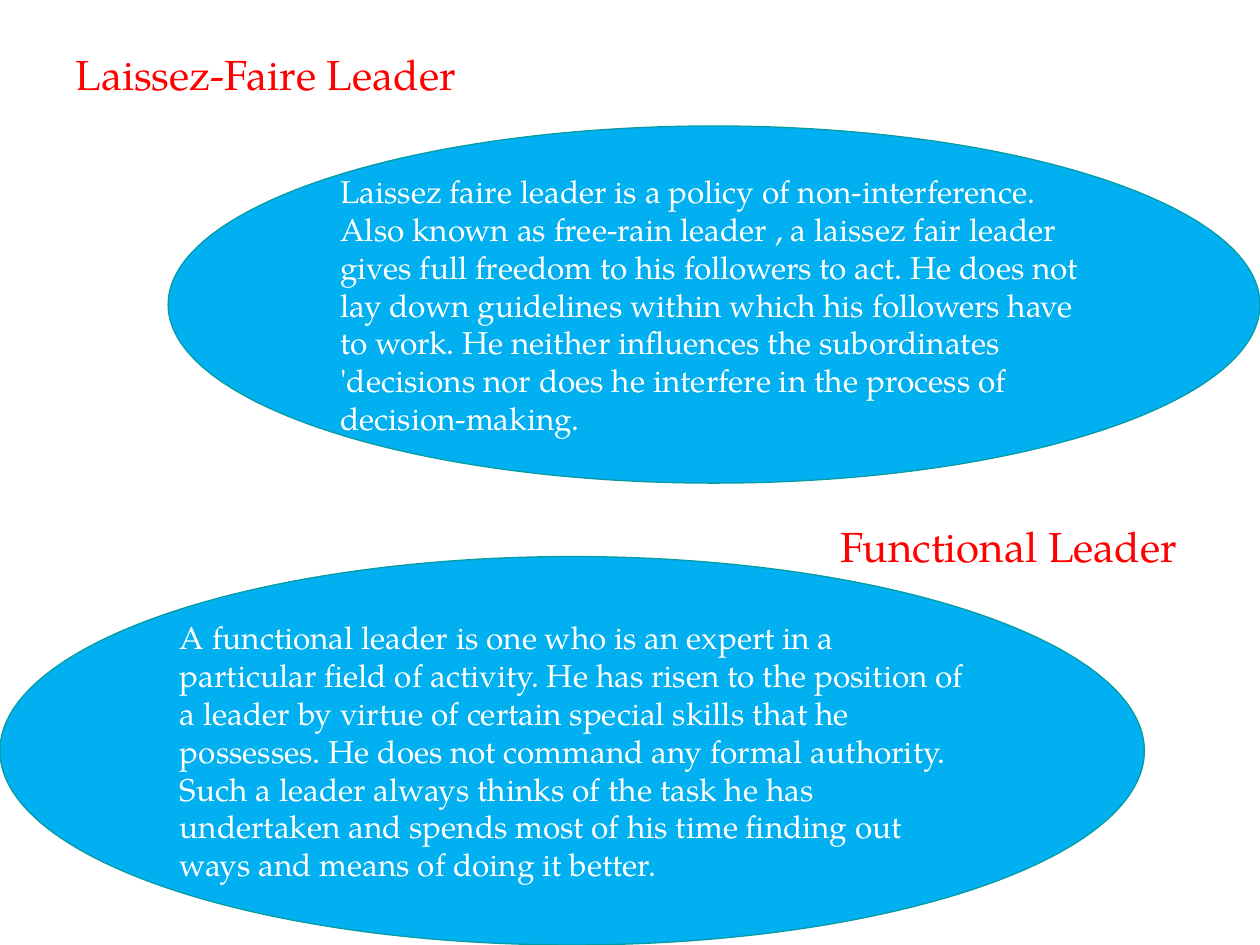
import pptx
import pptx.util
import pptx.dml.color
import pptx.enum.shapes
import pptx.enum.text
from dataclasses import dataclass

Cm, Pt = pptx.util.Cm, pptx.util.Pt
RGB = pptx.dml.color.RGBColor.from_string
Align = pptx.enum.text.PP_ALIGN
Anchor = pptx.enum.text.MSO_ANCHOR
Fit = pptx.enum.text.MSO_AUTO_SIZE


@dataclass(frozen=True)
class Theme:
    font: str = "TeX Gyre Pagella"
    red: str = "FF0000"
    white: str = "FFFFFF"
    blue: str = "00B0F0"
    teal: str = "069CA3"
    head: int = 24
    body: int = 18
    line: float = 0.75


THEME = Theme()

LAISSEZ = (
    "Laissez faire leader is a policy of non-interference. Also known as "
    "free-rain leader , a laissez fair leader gives full freedom to his "
    "followers to act. He does not lay down guidelines within which his "
    "followers have to work. He neither influences the subordinates "
    "'decisions nor does he interfere in the process of decision-making."
)
EXPERT = (
    "A functional leader is one who is an expert in a particular field of "
    "activity. He has risen to the position of a leader by virtue of certain "
    "special skills that he possesses. He does not command any formal "
    "authority. Such a leader always thinks of the task he has undertaken "
    "and spends most of his time finding out ways and means of doing it better."
)


def write(shape, text, *, size, color, anchor, fit=Fit.NONE):
    """Fill a shape with one left-aligned paragraph."""
    frame = shape.text_frame
    frame.word_wrap = True
    frame.auto_size = fit
    frame.vertical_anchor = anchor
    frame.margin_left = frame.margin_right = Cm(0.25)
    frame.margin_top = frame.margin_bottom = Cm(0.13)
    para = frame.paragraphs[0]
    para.alignment = Align.LEFT
    para.line_spacing = 1.0
    para.space_before = Pt(0)
    run = para.add_run()
    run.text = text
    run.font.name = THEME.font
    run.font.size = Pt(size)
    run.font.color.rgb = RGB(color)


def head(shape, text):
    """Format a title or text box as a red heading."""
    write(shape, text, size=THEME.head, color=THEME.red,
          anchor=Anchor.TOP, fit=Fit.SHAPE_TO_FIT_TEXT)


def title(slide, text, left, top, width, height):
    shape = slide.shapes.title
    shape.left, shape.top = Cm(left), Cm(top)
    shape.width, shape.height = Cm(width), Cm(height)
    head(shape, text)


def label(slide, text, left, top, width, height):
    box = slide.shapes.add_textbox(Cm(left), Cm(top), Cm(width), Cm(height))
    head(box, text)


def oval(slide, text, left, top, width, height):
    shape = slide.shapes.add_shape(
        pptx.enum.shapes.MSO_SHAPE.OVAL,
        Cm(left), Cm(top), Cm(width), Cm(height))
    shape.shadow.inherit = False
    shape.fill.solid()
    shape.fill.fore_color.rgb = RGB(THEME.blue)
    shape.line.color.rgb = RGB(THEME.teal)
    shape.line.width = Pt(THEME.line)
    write(shape, text, size=THEME.body, color=THEME.white,
          anchor=Anchor.MIDDLE)


def main():
    deck = pptx.Presentation()
    deck.slide_width, deck.slide_height = Cm(25.4), Cm(19.05)
    slide = deck.slides.add_slide(deck.slide_layouts.get_by_name("Title Only"))

    # Laissez-faire leader
    title(slide, "Laissez-Faire Leader", 1.27, 0.84, 9.1, 1.3)
    oval(slide, LAISSEZ, 3.39, 2.54, 22.01, 7.2)

    # Functional leader
    label(slide, "Functional Leader", 16.69, 10.37, 8.28, 1.3)
    oval(slide, EXPERT, 0, 11.22, 23.07, 7.83)

    deck.save("out.pptx")


if __name__ == "__main__":
    main()
